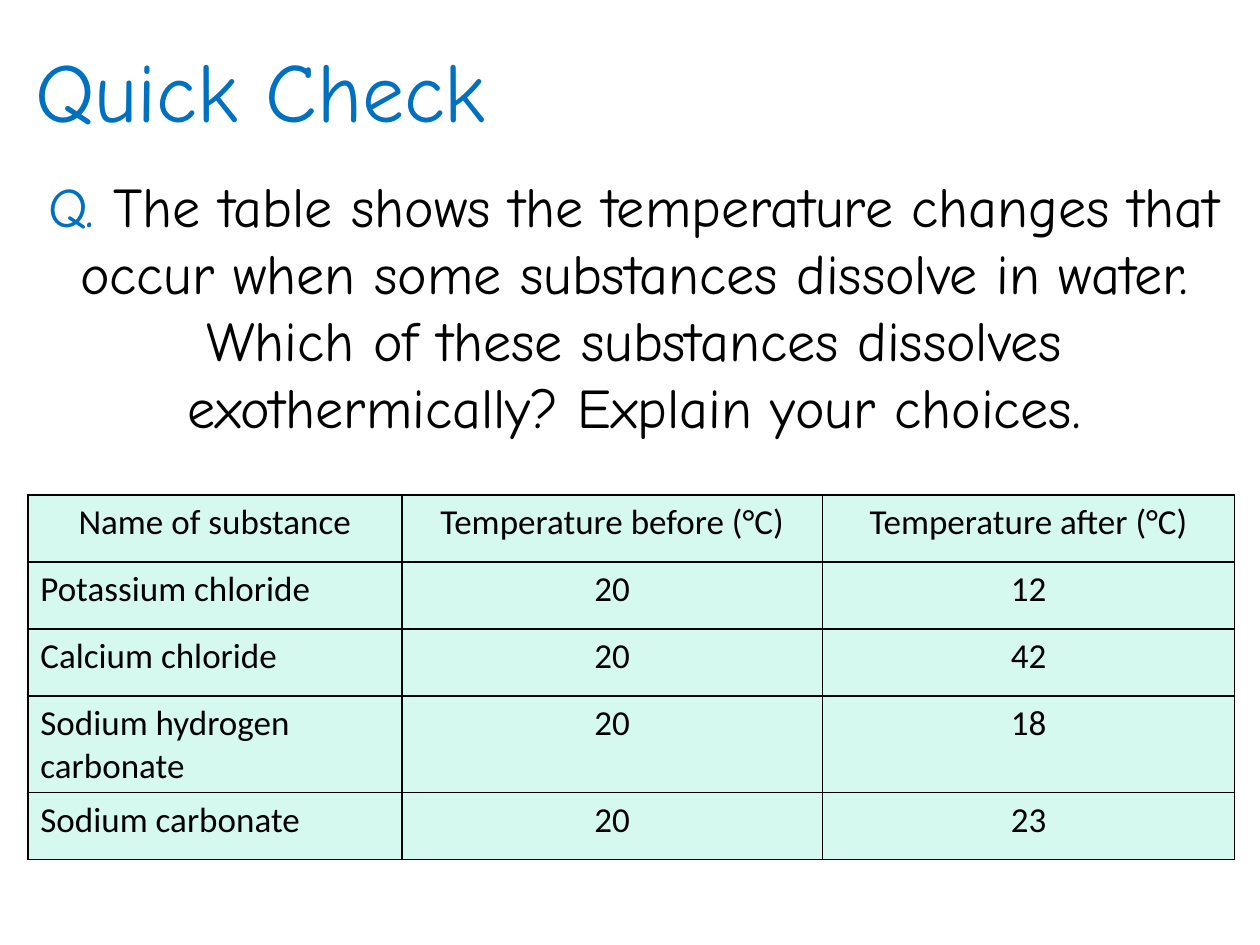
from dataclasses import dataclass

from lxml.etree import SubElement
from pptx import Presentation
from pptx.dml.color import RGBColor
from pptx.enum.text import MSO_AUTO_SIZE as AutoSize, PP_ALIGN as Align
from pptx.oxml.ns import qn
from pptx.util import Cm, Pt

BLUE, BLACK, MINT = "0070C0", "000000", "D5F9EE"
HEADING_FONT, TABLE_FONT = "Comic Neue", "Calibri"
COLUMN_WIDTHS = (7.54, 8.48, 8.31)
ROW_HEIGHT = 1.35
ROWS = (
    ("Name of substance", "Temperature before (°C)", "Temperature after (°C)"),
    ("Potassium chloride", "20", "12"),
    ("Calcium chloride", "20", "42"),
    ("Sodium hydrogen carbonate", "20", "18"),
    ("Sodium carbonate", "20", "23"),
)


@dataclass
class Span:
    text: str
    color: str


@dataclass
class TextBlock:
    left: float
    top: float
    width: float
    height: float
    size: int
    align: Align
    spans: tuple[Span, ...]


TEXT_BLOCKS = (
    TextBlock(0.46, 0.66, 13.67, 2.31, 48, Align.LEFT,
              (Span("Quick Check", BLUE),)),
    TextBlock(0.61, 3.33, 24.36, 5.74, 32, Align.CENTER, (
        Span("Q. ", BLUE),
        Span("The table shows the temperature changes that occur when some "
             "substances dissolve in water. Which of these substances "
             "dissolves exothermically? Explain your choices.", BLACK),
    )),
)


def rgb(color: str) -> RGBColor:
    return RGBColor.from_string(color)


def add_span(para, span: Span, font: str, size: int) -> None:
    run = para.add_run()
    run.text = span.text
    run.font.name = font
    run.font.size = Pt(size)
    run.font.color.rgb = rgb(span.color)


def add_text(page, block: TextBlock) -> None:
    box = page.shapes.add_textbox(Cm(block.left), Cm(block.top),
                                  Cm(block.width), Cm(block.height))
    frame = box.text_frame
    frame.word_wrap = True
    frame.auto_size = AutoSize.SHAPE_TO_FIT_TEXT
    para = frame.paragraphs[0]
    para.alignment = block.align
    for span in block.spans:
        add_span(para, span, HEADING_FONT, block.size)


def add_borders(cell) -> None:
    """Rule all four sides; call before filling, as lines come first in tcPr."""
    properties = cell._tc.get_or_add_tcPr()
    for side in ("lnL", "lnR", "lnT", "lnB"):
        line = SubElement(properties, qn(f"a:{side}"), w=str(Pt(1)))
        fill = SubElement(line, qn("a:solidFill"))
        SubElement(fill, qn("a:srgbClr"), val=BLACK)


def add_results_table(page, left: float, top: float) -> None:
    frame = page.shapes.add_table(
        len(ROWS), len(COLUMN_WIDTHS), Cm(left), Cm(top),
        Cm(sum(COLUMN_WIDTHS)), Cm(ROW_HEIGHT * len(ROWS)))
    table = frame.table
    table.first_row = table.horz_banding = False
    for column, width in zip(table.columns, COLUMN_WIDTHS):
        column.width = Cm(width)
    for row_index, texts in enumerate(ROWS):
        table.rows[row_index].height = Cm(ROW_HEIGHT)
        for column_index, text in enumerate(texts):
            cell = table.cell(row_index, column_index)
            add_borders(cell)
            cell.fill.solid()
            cell.fill.fore_color.rgb = rgb(MINT)
            para = cell.text_frame.paragraphs[0]
            is_substance = row_index > 0 and column_index == 0
            para.alignment = Align.LEFT if is_substance else Align.CENTER
            add_span(para, Span(text, BLACK), TABLE_FONT, 20)


def main() -> None:
    deck = Presentation()
    deck.slide_width, deck.slide_height = Cm(25.4), Cm(19.05)
    page = deck.slides.add_slide(deck.slide_layouts[6])
    for block in TEXT_BLOCKS:
        add_text(page, block)
    add_results_table(page, 0.56, 9.98)
    deck.save("out.pptx")


if __name__ == "__main__":
    main()
